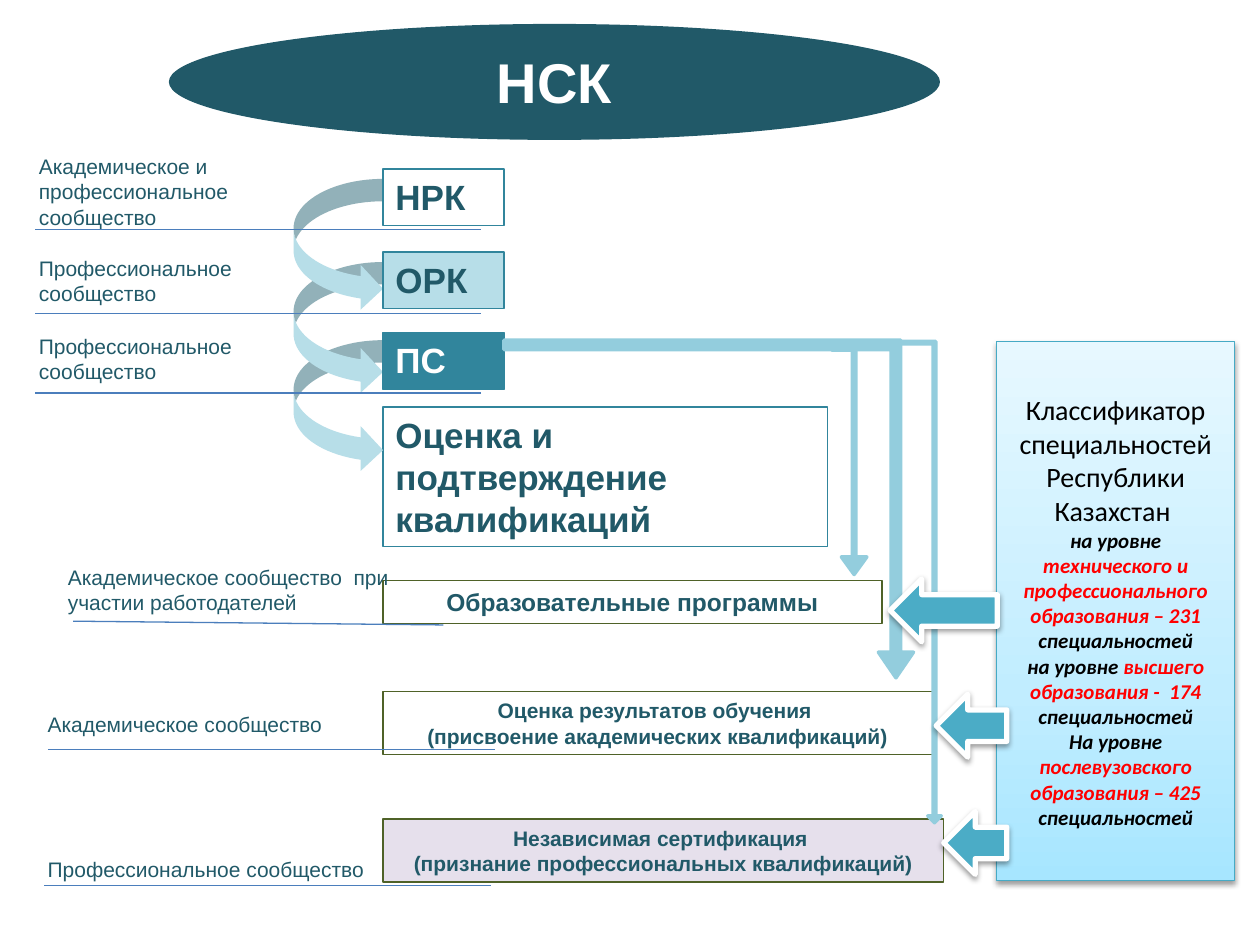
from copy import deepcopy

from lxml import etree
from pptx import Presentation
from pptx.dml.color import RGBColor
from pptx.enum import shapes, text
from pptx.oxml import parse_xml
from pptx.oxml.ns import nsdecls, qn
from pptx.util import Inches, Pt

DARK, TEAL, PALE, SKY = "215968", "31859C", "B7DEE8", "93CDDD"
OLIVE, RULE, WHITE = "4F6228", "4B7EBC", "FFFFFF"
SHAPE, ALIGN = shapes.MSO_SHAPE, text.PP_ALIGN
SHADOW = (
    f'<a:effectLst {nsdecls("a")}>'
    '<a:outerShdw blurRad="40000" dist="20000" dir="5400000" rotWithShape="0">'
    '<a:srgbClr val="000000"><a:alpha val="38000"/></a:srgbClr>'
    '</a:outerShdw></a:effectLst>'
)

prs = Presentation()
prs.slide_width, prs.slide_height = Inches(10), Inches(7.5)
s = prs.slides.add_slide(prs.slide_layouts[6])
rgb = RGBColor.from_string


def add_shape(kind, box, fill=None, line=None, width=0.75, shadow=False):
    """Add a preset shape at box (inches); no colour means no fill or no line."""
    sp = s.shapes.add_shape(kind, *map(Inches, box))
    sp.shadow.inherit = False
    if fill:
        sp.fill.solid()
        sp.fill.fore_color.rgb = rgb(fill)
    else:
        sp.fill.background()
    if line:
        sp.line.color.rgb = rgb(line)
        sp.line.width = Pt(width)
    else:
        sp.line.fill.background()
    if shadow:
        empty = sp._element.spPr.find(qn("a:effectLst"))
        empty.getparent().replace(empty, parse_xml(SHADOW))
    return sp


def write(sp, lines, size, color=DARK, bold=True, align=ALIGN.LEFT):
    tf = sp.text_frame
    tf.word_wrap = True
    tf.vertical_anchor = text.MSO_ANCHOR.TOP
    tf.text = "\n".join(lines)
    for p in tf.paragraphs:
        p.alignment = align
        p.font.name, p.font.size, p.font.bold = "Arial", Pt(size), bold
        p.font.color.rgb = rgb(color)


# Qualification chain
sp = add_shape(SHAPE.RECTANGLE, (3.04, 3.23, 3.53, 1.11), WHITE, TEAL)
write(sp, ["Оценка и подтверждение квалификаций"], 20)
for top in (2.7, 2.08, 1.42):
    add_shape(SHAPE.CURVED_RIGHT_ARROW, (2.33, top, 0.71, 1.05), PALE)
for name, top, fill, color in (
    ("ПС", 2.64, TEAL, WHITE),
    ("ОРК", 2, PALE, DARK),
    ("НРК", 1.34, WHITE, DARK),
):
    write(add_shape(SHAPE.RECTANGLE, (3.04, top, 0.96, 0.45), fill, TEAL), [name], 20, color)

# Title
sp = add_shape(SHAPE.OVAL, (1.34, 0.19, 6.12, 0.92), DARK)
write(sp, ["НСК"], 32, WHITE, align=ALIGN.CENTER)

# Education and certification stages
for lines, top, width, height, fill, size in (
    (["Образовательные программы"], 4.61, 3.96, 0.34, WHITE, 14),
    (["Оценка результатов обучения ", "(присвоение академических квалификаций)"],
     5.49, 4.36, 0.5, None, 12),
    (["Независимая сертификация ", "(признание профессиональных квалификаций)"],
     6.5, 4.45, 0.5, "E6E0EC", 12),
):
    sp = add_shape(SHAPE.RECTANGLE, (3.04, top, width, height), fill, OLIVE)
    write(sp, lines, size, align=ALIGN.CENTER)

# Responsible communities and the rules under them
for label, box in (
    ("Академическое и профессиональное сообщество", (0.21, 1.17, 2.09, 0.72)),
    ("Профессиональное сообщество", (0.21, 1.98, 2.2, 0.52)),
    ("Профессиональное сообщество", (0.21, 2.6, 2.2, 0.52)),
    ("Академическое сообщество  при участии работодателей", (0.44, 4.43, 3.33, 0.52)),
    ("Академическое сообщество", (0.28, 5.6, 3.26, 0.31)),
    ("Профессиональное сообщество", (0.28, 6.75, 3.26, 0.31)),
):
    write(s.shapes.add_textbox(*map(Inches, box)), [label], 12, bold=False)

for ends in (
    (0.28, 1.82, 3.82, 1.82),
    (0.28, 2.49, 3.82, 2.49),
    (0.28, 3.12, 3.82, 3.12),
    (0.58, 4.93, 3.52, 4.96),
    (0.38, 5.95, 3.93, 5.95),
    (0.35, 7.03, 3.9, 7.03),
):
    cn = s.shapes.add_connector(shapes.MSO_CONNECTOR.STRAIGHT, *map(Inches, ends))
    cn.line.color.rgb = rgb(RULE)
    cn.line.width = Pt(0.75)
    etree.SubElement(cn._element.spPr, qn("a:effectLst"))

# Bent arrows from ПС down to the stages
for box, adjustments in (
    ((6.6, 2.75, 0.28, 1.81), (0.102, 0.361, 0.5)),
    ((6.75, 2.71, 0.72, 3.82), (0.028, 0.074, 0.076)),
    ((4, 2.7, 3.25, 2.68), (0.028, 0.052, 0.076)),
):
    sp = add_shape(SHAPE.BENT_UP_ARROW, box, SKY, SKY, 2)
    sp._element.spPr.xfrm.set("flipV", "1")
    for i, value in enumerate(adjustments):
        sp.adjustments[i] = value

# Classifier panel
panel = add_shape(SHAPE.RECTANGLE, (7.91, 2.71, 1.89, 4.28), None, "46AAC5", shadow=True)
panel.fill.gradient()
panel.fill.gradient_angle = 270
stops = panel.fill._fill._gradFill.gsLst
stops.insert(1, deepcopy(stops[0]))
for stop, position, color in zip(
    panel.fill.gradient_stops, (0, 0.65, 1), ("E7F8FF", "C1EDFF", "A7E6FF")
):
    stop.position = position
    stop.color.rgb = rgb(color)

tf = panel.text_frame
tf.word_wrap = True
tf.vertical_anchor = text.MSO_ANCHOR.MIDDLE
for i, parts in enumerate((
    ("Классификатор специальностей Республики Казахстан ",),
    ("на уровне ", "технического и профессионального образования – 231 ", "специальностей"),
    ("на уровне ", "высшего образования -  174 ", "специальностей"),
    ("На уровне ", "послевузовского образования – 425 ", "специальностей"),
)):
    p = tf.add_paragraph() if i else tf.paragraphs[0]
    p.alignment = ALIGN.CENTER
    p.font.name, p.font.size = "Calibri", Pt(12 if i else 16)
    p.font.bold = p.font.italic = i > 0
    for j, part in enumerate(parts):
        r = p.add_run()
        r.text = part
        r.font.color.rgb = rgb("FF0000" if j == 1 else "000000")

# Arrows from the classifier to the stages
for left, top, length in ((7.24, 4.42, 0.85), (7.46, 5.48, 0.56), (7.49, 6.44, 0.5)):
    sp = add_shape(SHAPE.DOWN_ARROW, (left, top, 0.5, length), "4BACC6", WHITE, 3, shadow=True)
    sp.rotation = 90

prs.save("out.pptx")
